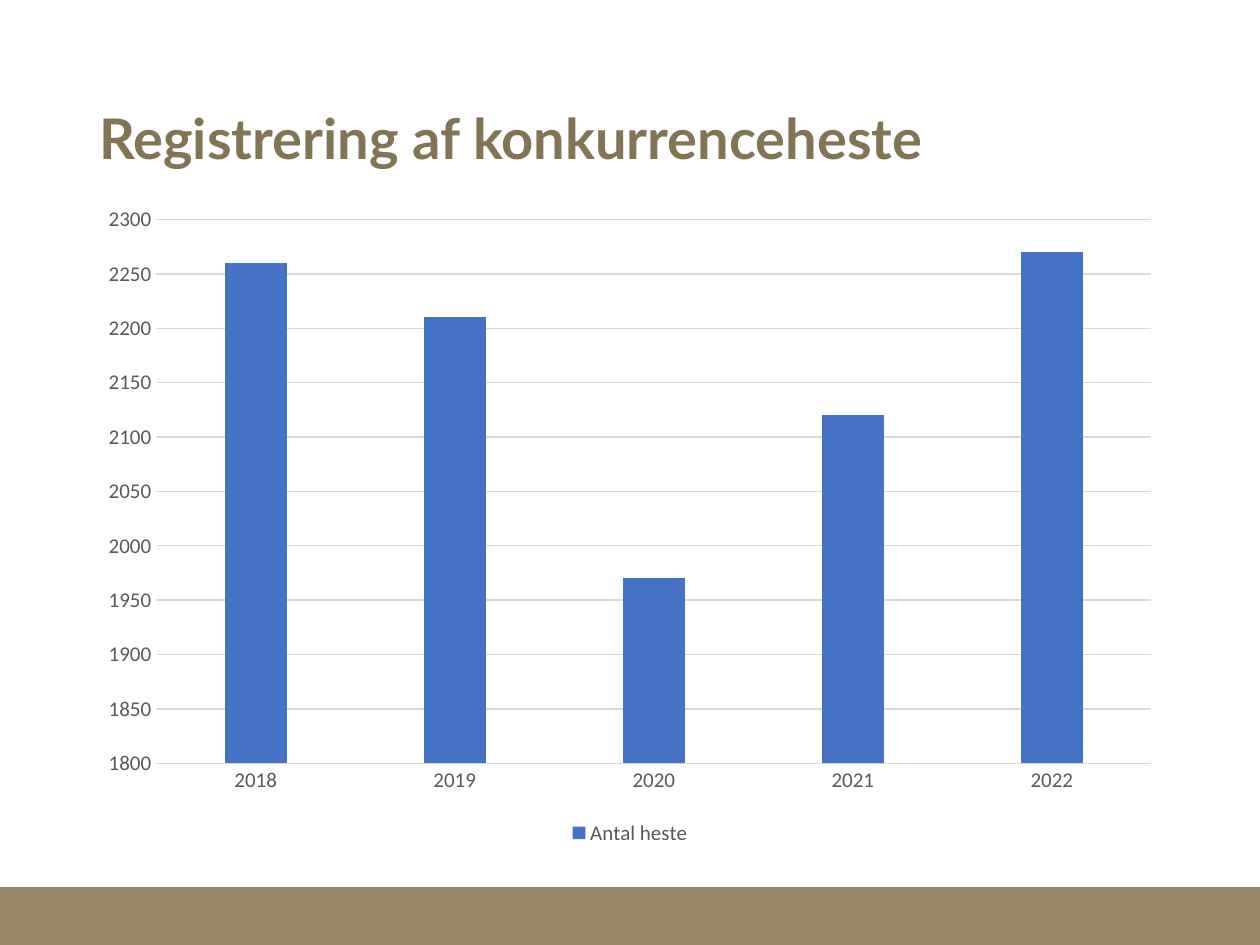
from pptx import Presentation
from pptx.chart.data import CategoryChartData
from pptx.dml.color import RGBColor
from pptx.enum.chart import XL_CHART_TYPE as ChartType, XL_LEGEND_POSITION as LegendPosition
from pptx.enum.chart import XL_TICK_MARK as TickMark
from pptx.enum.text import MSO_ANCHOR as Anchor
from pptx.enum.shapes import MSO_SHAPE as Shape
from pptx.util import Inches, Pt

TITLE = "Registrering af konkurrenceheste"
SERIES = "Antal heste"
HORSES = {"2018": 2260, "2019": 2210, "2020": 1970, "2021": 2120, "2022": 2270}

BAND = RGBColor(0x95, 0x87, 0x66)
TITLE_COLOR = RGBColor(0x82, 0x75, 0x53)
BAR = RGBColor(0x44, 0x72, 0xC4)
LABEL = RGBColor(0x59, 0x59, 0x59)
RULE = RGBColor(0xD9, 0xD9, 0xD9)

WIDTH, HEIGHT = Inches(10), Inches(7.5)
MARGIN = Inches(0.69)
CONTENT_WIDTH = WIDTH - 2 * MARGIN
BAND_HEIGHT = Inches(0.46)


def style_font(font, size, color, name="Calibri"):
    font.name = name
    font.size = Pt(size)
    font.color.rgb = color


def style_rule(line):
    line.color.rgb = RULE
    line.width = Pt(0.75)


def add_band(page):
    band = page.shapes.add_shape(Shape.RECTANGLE, 0, HEIGHT - BAND_HEIGHT, WIDTH, BAND_HEIGHT)
    band.shadow.inherit = False
    band.fill.solid()
    band.fill.fore_color.rgb = BAND
    band.line.fill.background()


def add_title(page):
    box = page.shapes.add_textbox(MARGIN, Inches(0.4), CONTENT_WIDTH, Inches(1.45))
    frame = box.text_frame
    frame.word_wrap = True
    frame.vertical_anchor = Anchor.MIDDLE
    para = frame.paragraphs[0]
    para.line_spacing = 0.9
    span = para.add_run()
    span.text = TITLE
    style_font(span.font, 32, TITLE_COLOR, "Lato")
    span.font.bold = True


def add_horse_chart(page):
    data = CategoryChartData()
    data.categories = list(HORSES)
    data.add_series(SERIES, list(HORSES.values()))
    chart = page.shapes.add_chart(
        ChartType.COLUMN_CLUSTERED, MARGIN, Inches(1.54), CONTENT_WIDTH, Inches(5.21), data
    ).chart
    chart.has_title = False
    style_font(chart.font, 12, LABEL)

    plot = chart.plots[0]
    plot.gap_width = 219
    plot.overlap = -27
    plot.vary_by_categories = False
    fill = plot.series[0].format.fill
    fill.solid()
    fill.fore_color.rgb = BAR

    years, counts = chart.category_axis, chart.value_axis
    for axis in (years, counts):
        axis.major_tick_mark = axis.minor_tick_mark = TickMark.NONE
        style_font(axis.tick_labels.font, 12, LABEL)
    style_rule(years.format.line)
    counts.format.line.fill.background()
    counts.minimum_scale, counts.maximum_scale = 1800, 2300
    counts.major_unit = 50
    counts.has_major_gridlines = True
    style_rule(counts.major_gridlines.format.line)

    chart.has_legend = True
    chart.legend.position = LegendPosition.BOTTOM
    chart.legend.include_in_layout = False
    style_font(chart.legend.font, 12, LABEL)


def main():
    deck = Presentation()
    deck.slide_width, deck.slide_height = WIDTH, HEIGHT
    page = deck.slides.add_slide(deck.slide_layouts[6])
    add_band(page)
    add_title(page)
    add_horse_chart(page)
    deck.save("out.pptx")


if __name__ == "__main__":
    main()
